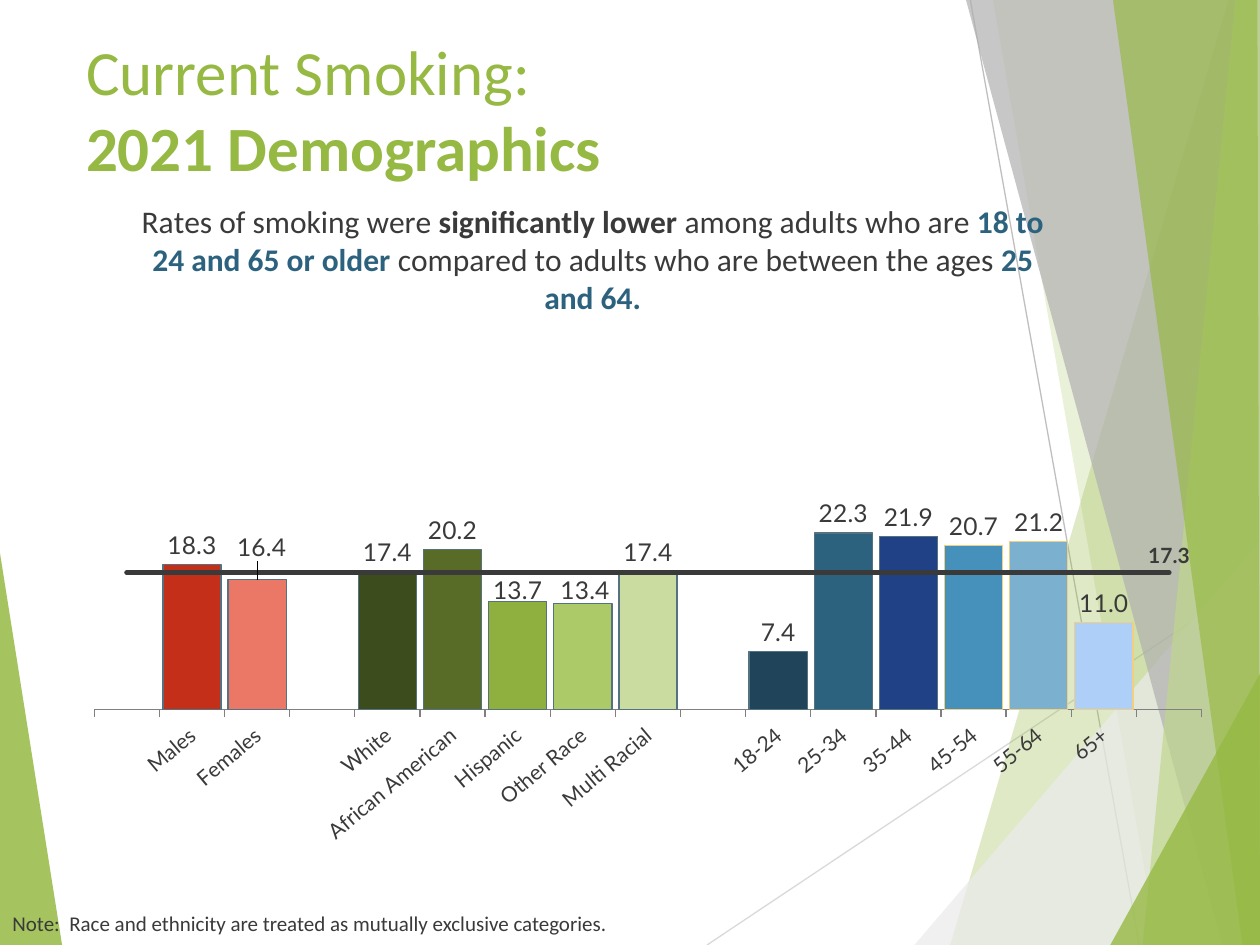
from lxml import etree
from pptx import Presentation
from pptx.chart.data import CategoryChartData
from pptx.dml.color import RGBColor
from pptx.enum.chart import (XL_CHART_TYPE as ChartType, XL_LABEL_POSITION as LabelPos,
                             XL_MARKER_STYLE as Marker, XL_TICK_MARK as Tick)
from pptx.enum.shapes import MSO_CONNECTOR as Connector
from pptx.enum.text import MSO_ANCHOR as Anchor, PP_ALIGN as Align
from pptx.oxml import parse_xml
from pptx.oxml.ns import nsdecls, qn
from pptx.util import Pt

GREEN = RGBColor(0x96, 0xB9, 0x43)
PALE_GREEN = RGBColor(0xC0, 0xD6, 0x8D)
GREY = RGBColor(0xB0, 0xB0, 0xB0)
LIGHT_GREY = RGBColor(0xEB, 0xEB, 0xEB)
RULE_LIGHT = RGBColor(0xD9, 0xD9, 0xD9)
RULE_DARK = RGBColor(0xBF, 0xBF, 0xBF)
AXIS_GREY = RGBColor(0x80, 0x80, 0x80)
INK = RGBColor(0x3A, 0x3A, 0x3A)
BLUE = RGBColor(0x2D, 0x62, 0x7F)
BAR_EDGE = RGBColor(0x54, 0x72, 0x7F)
GOLD_EDGE = RGBColor(0xF0, 0xD0, 0x80)


def set_font(font, color=INK, **values):
    for name, value in values.items():
        setattr(font, name, value)
    font.color.rgb = color


def set_layout(parent, index, **values):
    for old in parent.findall(qn("c:layout")):
        parent.remove(old)
    layout = etree.Element(qn("c:layout"))
    manual = etree.SubElement(layout, qn("c:manualLayout"))
    for name, value in values.items():
        etree.SubElement(manual, qn("c:" + name)).set("val", str(value))
    parent.insert(index, layout)


deck = Presentation()
deck.slide_width, deck.slide_height = Pt(720), Pt(540)
page = deck.slides.add_slide(deck.slide_layouts[5])

# Thin background rules
for color, ends in [(RULE_LIGHT, (404, 540, 720, 329)), (RULE_DARK, (554.5, 0, 651, 540))]:
    rule = page.shapes.add_connector(Connector.STRAIGHT, *[Pt(end) for end in ends])
    rule.line.color.rgb = color
    rule.line.width = Pt(0.75)
    etree.SubElement(rule._element.spPr, qn("a:effectLst"))

# Translucent background facets: colour, opacity in percent, corners
facets = [
    (GREEN, 85, [(0, 316), (35.5, 540), (0, 540)]),
    (GREEN, 30, [(702, 0), (543, 540), (720, 540), (720, 0)]),
    (GREEN, 20, [(567.5, 0), (661.5, 540), (720, 540), (720, 0)]),
    (LIGHT_GREY, 72, [(522.5, 540), (720, 309), (720, 540)]),
    (GREY, 70, [(552, 0), (698.5, 540), (720, 540), (720, 0)]),
    (PALE_GREEN, 70, [(706, 0), (653, 540), (720, 540), (720, 0)]),
    (GREEN, 65, [(636, 0), (710, 540), (720, 540), (718.5, 0)]),
    (GREEN, 80, [(634.5, 540), (720, 385), (720, 540)]),
]
for color, opacity, corners in facets:
    corners = [(Pt(x), Pt(y)) for x, y in corners]
    builder = page.shapes.build_freeform(*corners[0])
    builder.add_line_segments(corners[1:], close=True)
    facet = builder.convert_to_shape()
    facet.shadow.inherit = False
    facet.line.fill.background()
    facet.fill.solid()
    facet.fill.fore_color.rgb = color
    tint = facet._element.spPr.find(qn("a:solidFill"))[0]
    etree.SubElement(tint, qn("a:alpha")).set("val", str(opacity * 1000))

# Title, in front of the background
title = page.shapes.title
page.shapes._spTree.append(title._element)
title.left, title.top, title.width, title.height = Pt(42), Pt(12), Pt(620), Pt(99.5)
title.text_frame.vertical_anchor = Anchor.MIDDLE
para = title.text_frame.paragraphs[0]
para.alignment = Align.LEFT
for text, bold in [("Current Smoking:", False), ("2021 Demographics", True)]:
    if bold:
        para.add_line_break()
    span = para.add_run()
    span.text = text
    set_font(span.font, GREEN, name="Calibri", size=Pt(36), bold=bold)

# Footnote
note = page.shapes.add_textbox(Pt(0), Pt(517), Pt(624), Pt(22))
note.text_frame.word_wrap = True
span = note.text_frame.paragraphs[0].add_run()
span.text = "Note:  Race and ethnicity are treated as mutually exclusive categories."
set_font(span.font, name="Calibri", size=Pt(12))

# Chart data: category, rate, bar colour; blank rows separate the groups
gap = ("", None, None)
bars = [
    gap,
    ("Males", 18.3, "C42F1A"), ("Females", 16.4, "EB7766"),
    gap,
    ("White", 17.4, "3D4C1C"), ("African American", 20.2, "586B27"),
    ("Hispanic", 13.7, "8FAF3F"), ("Other Race", 13.4, "ACCA68"),
    ("Multi Racial", 17.4, "CBDCA0"),
    gap,
    ("18-24", 7.4, "20455A"), ("25-34", 22.3, "2D627F"), ("35-44", 21.9, "214187"),
    ("45-54", 20.7, "4591BB"), ("55-64", 21.2, "7BB1CF"), ("65+", 11.0, "AECFF8"),
    gap,
]
gold_edged = {"45-54", "55-64", "65+"}
data = CategoryChartData(number_format="0.0")
data.categories = [name for name, rate, color in bars]
data.add_series("Series 1", [rate for name, rate, color in bars])
data.add_series("Series 2", [17.3] * len(bars))
chart = page.shapes.add_chart(ChartType.COLUMN_CLUSTERED, Pt(33), Pt(105),
                              Pt(654), Pt(385), data).chart
chart.has_legend = False
set_font(chart.font, name="Calibri", size=Pt(10))

# Second series becomes a line on the same axes
plot_area = chart._chartSpace.chart.plotArea
bar_plot = plot_area.find(qn("c:barChart"))
line_plot = parse_xml(f'<c:lineChart {nsdecls("c")}><c:grouping val="standard"/>'
                      '<c:varyColors val="0"/></c:lineChart>')
average = bar_plot.findall(qn("c:ser"))[1]
for bar_only in average.findall(qn("c:invertIfNegative")):
    average.remove(bar_only)
line_plot.append(average)
etree.SubElement(line_plot, qn("c:marker")).set("val", "1")
for axis_id in bar_plot.findall(qn("c:axId")):
    etree.SubElement(line_plot, qn("c:axId")).set("val", axis_id.get("val"))
bar_plot.addnext(line_plot)
set_layout(plot_area, 0, layoutTarget="inner", xMode="edge", yMode="edge",
           x=0.032, y=0.193, w=0.968, h=0.588)

# Chart heading
chart.has_title = True
para = chart.chart_title.text_frame.paragraphs[0]
for text, bold, color in [
    ("Rates of smoking were ", False, INK), ("significantly lower", True, INK),
    (" among adults who are ", False, INK), ("18 to 24 and 65 or older", True, BLUE),
    (" compared to adults who are between the ages ", False, INK),
    ("25 and 64.", True, BLUE),
]:
    span = para.add_run()
    span.text = text
    set_font(span.font, color, name="Calibri", size=Pt(18), bold=bold)
set_layout(chart.chart_title._element, 1, xMode="edge", yMode="edge", x=0.07, y=0.02)

# Axes
rates = chart.value_axis
for name, value in dict(minimum_scale=0, maximum_scale=50, major_unit=10,
                        has_major_gridlines=False, visible=False).items():
    setattr(rates, name, value)
groups = chart.category_axis
groups.major_tick_mark = Tick.OUTSIDE
groups.format.line.color.rgb = AXIS_GREY
groups.format.line.width = Pt(0.75)
set_font(groups.tick_labels.font, name="Lato", size=Pt(12))
groups._element.find(qn("c:txPr")).find(qn("a:bodyPr")).set("rot", "-2400000")

# Bars and their labels
columns, line = chart.plots
columns.gap_width = 12
columns.vary_by_categories = False
rate_bars = columns.series[0]
rate_bars.format.fill.solid()
rate_bars.format.fill.fore_color.rgb = GREEN
for index, (name, rate, color) in enumerate(bars):
    if rate is None:
        continue
    look = rate_bars.points[index].format
    look.fill.solid()
    look.fill.fore_color.rgb = RGBColor.from_string(color)
    look.line.color.rgb = GOLD_EDGE if name in gold_edged else BAR_EDGE
    look.line.width = Pt(0.75)
labels = rate_bars.data_labels
for name, value in dict(show_value=True, number_format="0.0", number_format_is_linked=False,
                        position=LabelPos.OUTSIDE_END).items():
    setattr(labels, name, value)
set_font(labels.font, name="Lato", size=Pt(14))
for index, x, y in [(2, 0.004, -0.02), (6, 0, 0.012), (7, 0.002, 0.009)]:
    label = rate_bars.points[index].data_label
    set_font(label.font, name="Lato", size=Pt(14))
    label.position = LabelPos.OUTSIDE_END
    set_layout(label._get_or_add_dLbl(), 1, x=x, y=y)

# Average line, labelled at its last point
mean = line.series[0]
mean.smooth = False
mean.marker.style = Marker.NONE
mean.format.line.color.rgb = INK
mean.format.line.width = Pt(3)
mean.format.line._get_or_add_ln().set("cap", "rnd")
mean.data_labels.show_value = False
label = mean.points[len(bars) - 1].data_label
set_font(label.font, name="Lato", size=Pt(12), bold=True)
label.position = LabelPos.ABOVE

deck.save("out.pptx")
